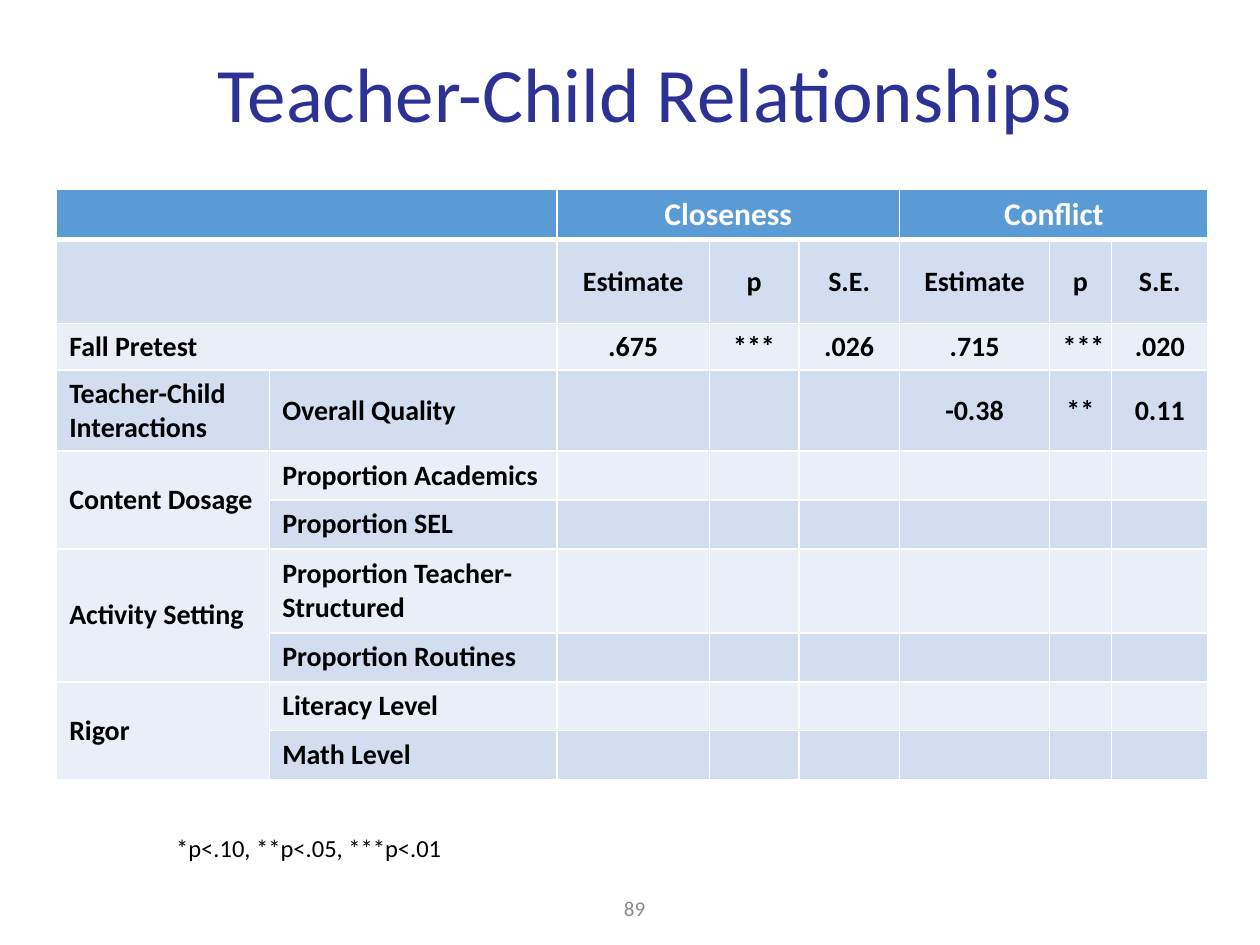
import pptx
import pptx.dml.color
import pptx.enum.text
import pptx.oxml
import pptx.oxml.ns
import pptx.util

Pt = pptx.util.Pt
ALIGN = pptx.enum.text.PP_ALIGN
MIDDLE = pptx.enum.text.MSO_ANCHOR.MIDDLE

FONT = "Calibri"
COLORS = {
    "title": "2D3193", "number": "8C8C8C", "text": "000000", "white": "FFFFFF",
    "header": "5B9BD5", "dark band": "D2DEEF", "light band": "EAEFF7",
}
COLUMN_WIDTHS = [121.7, 164.2, 87.1, 51.1, 57.6, 85.7, 35.3, 55.4]
ROW_HEIGHTS = [28.5, 48, 26.7, 46.2, 28, 28, 48, 28, 28, 28]
ROWS = [
    ["", "", "Closeness", "", "", "Conflict", "", ""],
    ["", ""] + ["Estimate", "p", "S.E."] * 2,
    ["Fall Pretest", "", ".675", "***", ".026", ".715", " ***", ".020"],
    ["Teacher-Child Interactions", "Overall Quality", "", "", "", "-0.38", "**", "0.11"],
    ["Content Dosage", "Proportion Academics"],
    ["", "Proportion SEL"],
    ["Activity Setting", "Proportion Teacher-Structured"],
    ["", "Proportion Routines"],
    ["Rigor", "Literacy Level"],
    ["", "Math Level"],
]
# First and last cell of each merged area, as (row, column)
MERGES = [
    ((0, 0), (0, 1)), ((0, 2), (0, 4)), ((0, 5), (0, 7)),
    ((1, 0), (1, 1)), ((2, 0), (2, 1)),
    ((4, 0), (5, 0)), ((6, 0), (7, 0)), ((8, 0), (9, 0)),
]


def rgb(name):
    return pptx.dml.color.RGBColor.from_string(COLORS[name])


def write(frame, text, size, color, align=ALIGN.LEFT, bold=False):
    para = frame.paragraphs[0]
    para.alignment = align
    span = para.add_run()
    span.text = text
    span.font.name = FONT
    span.font.size = Pt(size)
    span.font.bold = bold
    span.font.color.rgb = rgb(color)
    return para


def place(box, left, top, width, height):
    box.left, box.top = Pt(left), Pt(top)
    box.width, box.height = Pt(width), Pt(height)


def add_title(page, text):
    title = page.shapes.title
    place(title, 58.3, 3.6, 620.6, 104.4)
    title.text_frame.vertical_anchor = MIDDLE
    para = write(title.text_frame, text, 44, "title", ALIGN.CENTER)
    para.line_spacing = 0.9


def add_text(page, bounds, text, size, color, align=ALIGN.LEFT, anchor=None):
    box = page.shapes.add_textbox(*map(Pt, bounds))
    box.text_frame.word_wrap = True
    box.text_frame.vertical_anchor = anchor
    write(box.text_frame, text, size, color, align)


def add_borders(cell, bottom_width):
    properties = cell._tc.get_or_add_tcPr()
    widths = {"lnL": 1, "lnR": 1, "lnT": 1, "lnB": bottom_width}
    for index, (side, width) in enumerate(widths.items()):
        properties.insert(index, pptx.oxml.parse_xml(
            f'<a:{side} {pptx.oxml.ns.nsdecls("a")} w="{Pt(width)}"><a:solidFill>'
            f'<a:srgbClr val="{COLORS["white"]}"/></a:solidFill></a:{side}>'))


def set_empty_size(cell, size):
    """Keep a blank cell from growing its row."""
    cell.text_frame.paragraphs[0]._p.append(pptx.oxml.parse_xml(
        f'<a:endParaRPr {pptx.oxml.ns.nsdecls("a")} sz="{size * 100}"/>'))


def format_cell(cell, row, column, text):
    header = row == 0
    band = "header" if header else "dark band" if row % 2 else "light band"
    # Merged group labels take the band of their first row
    if column == 0 and row >= 4:
        band = "light band"
    cell.fill.solid()
    cell.fill.fore_color.rgb = rgb(band)
    cell.vertical_anchor = MIDDLE
    if text:
        align = ALIGN.LEFT if column < 2 else ALIGN.CENTER
        write(cell.text_frame, text, 18 if header else 16,
              "white" if header else "text", align, bold=True)
        if row > 1 and column > 1:
            cell.margin_left = cell.margin_right = cell.margin_top = Pt(0.7)
            cell.margin_bottom = Pt(0)
    else:
        set_empty_size(cell, 16)
    add_borders(cell, 3 if header else 1)


def add_results_table(page):
    frame = page.shapes.add_table(
        len(ROW_HEIGHTS), len(COLUMN_WIDTHS), Pt(32.4), Pt(108),
        Pt(sum(COLUMN_WIDTHS)), Pt(sum(ROW_HEIGHTS)))
    table = frame.table
    for column, width in zip(table.columns, COLUMN_WIDTHS):
        column.width = Pt(width)
    for row, height in zip(table.rows, ROW_HEIGHTS):
        row.height = Pt(height)
    for first, last in MERGES:
        table.cell(*first).merge(table.cell(*last))
    for row, texts in enumerate(ROWS):
        padded = texts + [""] * (len(COLUMN_WIDTHS) - len(texts))
        for column, text in enumerate(padded):
            format_cell(table.cell(row, column), row, column, text)


def main():
    deck = pptx.Presentation()
    deck.slide_width, deck.slide_height = Pt(720), Pt(540)
    page = deck.slides.add_slide(deck.slide_layouts[5])

    add_title(page, "Teacher-Child Relationships")

    # Page number
    add_text(page, (213.8, 504.7, 162, 28.8), "89", 12, "number", ALIGN.RIGHT, MIDDLE)

    add_results_table(page)

    # Significance key
    add_text(page, (93.6, 472.3, 257, 24.5), "*p<.10, **p<.05, ***p<.01", 14, "text")

    deck.save("out.pptx")


if __name__ == "__main__":
    main()
